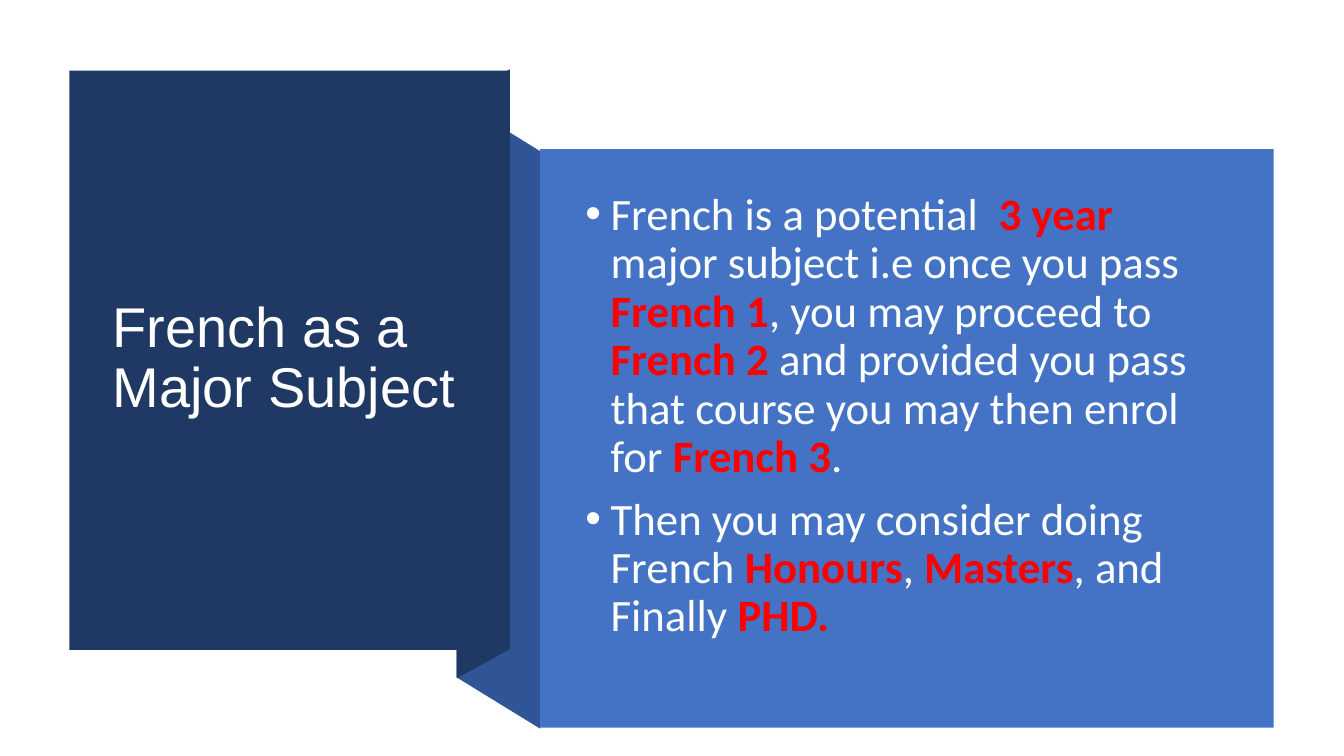
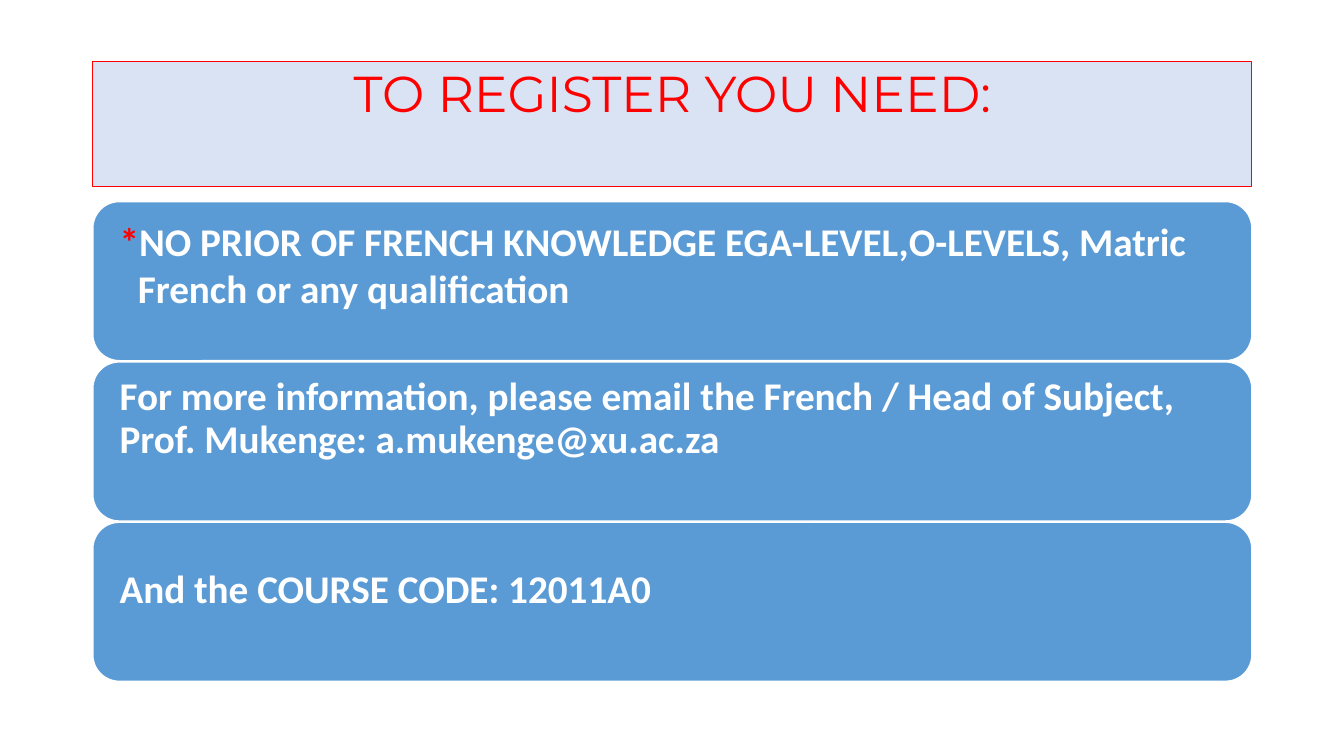
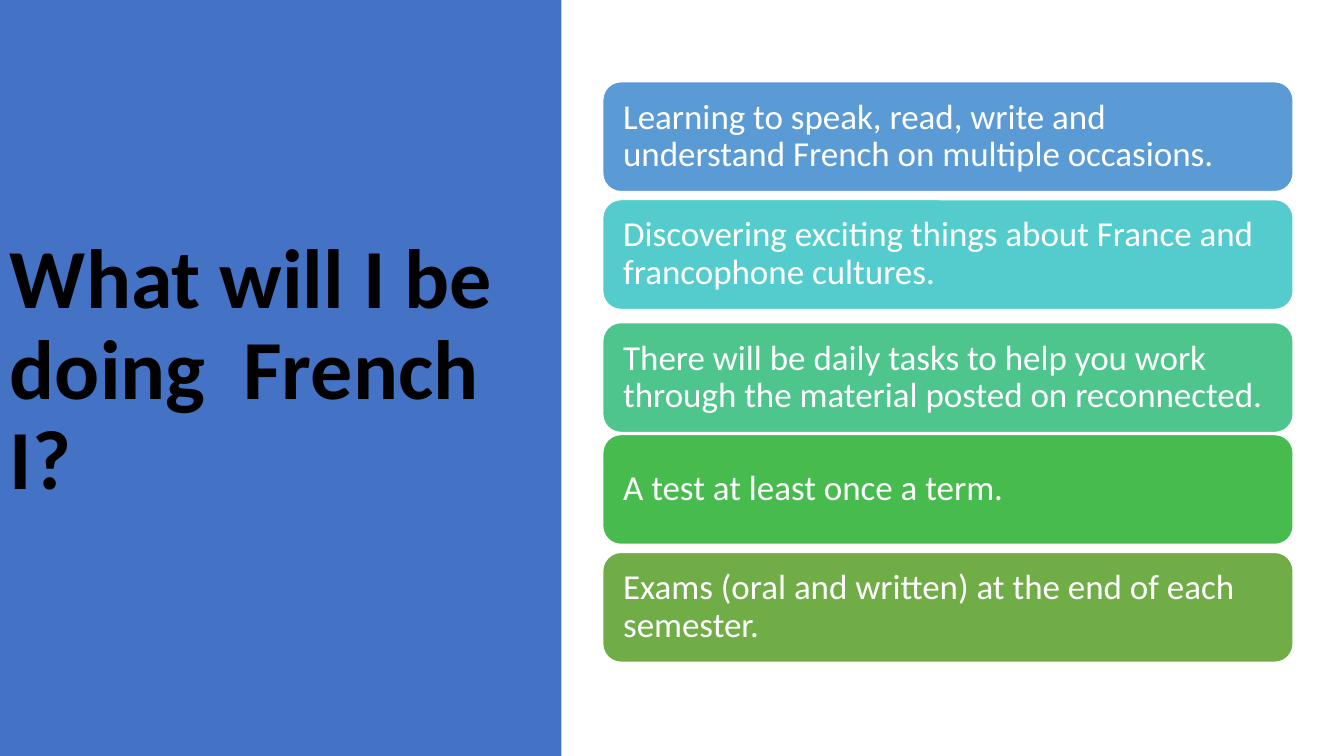
"""Build three slides on studying French."""
from lxml import etree
from pptx import Presentation
from pptx.dml.color import RGBColor
from pptx.enum.shapes import MSO_SHAPE
from pptx.enum.text import MSO_ANCHOR, MSO_AUTO_SIZE, PP_ALIGN
from pptx.oxml.ns import qn
from pptx.util import Cm, Pt

RECT, ROUND = MSO_SHAPE.RECTANGLE, MSO_SHAPE.ROUNDED_RECTANGLE
LEFT, CENTER = PP_ALIGN.LEFT, PP_ALIGN.CENTER
TOP, MIDDLE = MSO_ANCHOR.TOP, MSO_ANCHOR.MIDDLE
FIXED = MSO_AUTO_SIZE.NONE

HUES = {
    "navy": "203864", "fold": "2F5597", "blue": "4472C4", "pale": "DAE3F3",
    "sky": "5B9BD5", "aqua": "54CCCD", "mint": "4DC58D", "green": "48BB4F",
    "olive": "70AD47", "red": "FF0000", "white": "FFFFFF", "snow": "FEFFFF",
    "black": "000000",
}
INSET = (0.25, 0.13, 0.25, 0.13)

# Text between bars is red and bold.
MAJOR = [
    "French is a potential  |3 year |major subject i.e once you pass |French 1"
    "|, you may proceed to |French 2 |and provided you pass that course you "
    "may then enrol for |French 3|.",
    "Then you may consider doing French |Honours|, |Masters|, and Finally |PHD.",
]
FOLD = [(13.61, 18.36), (11.51, 17.07), (11.51, 2.51), (13.61, 3.81)]
TAB = [(12.85, 16.36), (11.51, 17.09), (11.51, 2.49), (12.85, 1.75)]

NEEDS = [
    (["|*|NO PRIOR OF FRENCH KNOWLEDGE EGA-LEVEL,O-LEVELS, Matric",
      "French or any qualification"], 1.0, 0.86),
    (["For more information, please email the French / Head of Subject, "
      "Prof. Mukenge: a.mukenge@xu.ac.za"], 0.9, 1.12),
    (["And the COURSE CODE: 12011A0"], 0.9, 0.53),
]
TASKS = [
    (2.06, "sky", "Learning to speak, read, write and understand French on "
     "multiple occasions."),
    (5.03, "aqua", "Discovering exciting things about France and francophone "
     "cultures."),
    (8.13, "mint", "There will be daily tasks to help you work through the "
     "material posted on reconnected."),
    (10.95, "green", "A test at least once a term."),
    (13.92, "olive", "Exams (oral and written) at the end of each semester."),
]


def rgb(hue):
    """Return the named colour."""
    return RGBColor.from_string(HUES[hue])


def paint(shape, fill, line=None, width=1):
    """Fill and outline a shape, without a shadow."""
    shape.shadow.inherit = False
    shape.fill.solid()
    shape.fill.fore_color.rgb = rgb(fill)
    if line:
        shape.line.color.rgb = rgb(line)
        shape.line.width = Pt(width)
    else:
        shape.line.fill.background()
    return shape


def box(slide, kind, at, fill, line=None):
    """Add a painted preset shape."""
    shape = slide.shapes.add_shape(kind, *map(Cm, at))
    return paint(shape, fill, line)


def outline(slide, points, fill):
    """Add a painted closed outline."""
    spots = [(Cm(x), Cm(y)) for x, y in points]
    pen = slide.shapes.build_freeform(*spots[0])
    pen.add_line_segments(spots[1:], close=True)
    return paint(pen.convert_to_shape(), fill)


def indent(para, left, hang=0, mark=None):
    """Indent a paragraph and give it a bullet if asked."""
    props = para._p.get_or_add_pPr()
    props.set("marL", str(Cm(left)))
    props.set("indent", str(-Cm(hang)))
    if mark:
        face = etree.SubElement(props, qn("a:buFont"))
        face.set("typeface", "Arial")
        etree.SubElement(props, qn("a:buChar")).set("char", mark)


def write(shape, lines, size, hue="white", font="Calibri", bold=False,
          align=LEFT, anchor=MIDDLE, space=0.9, before=0, inset=INSET):
    """Write paragraphs into a shape in one format."""
    frame = shape.text_frame
    frame.word_wrap = True
    frame.auto_size = FIXED
    frame.vertical_anchor = anchor
    (frame.margin_left, frame.margin_top,
     frame.margin_right, frame.margin_bottom) = map(Cm, inset)
    for i, line in enumerate(lines):
        para = frame.paragraphs[0] if i == 0 else frame.add_paragraph()
        para.alignment = align
        para.line_spacing = space
        para.space_before = Pt(before)
        for j, part in enumerate(line.split("|")):
            if part:
                run = para.add_run()
                run.text = part
                run.font.name = font
                run.font.size = Pt(size)
                run.font.bold = bold or j % 2 == 1
                run.font.color.rgb = rgb("red" if j % 2 else hue)
    return frame.paragraphs


def head(slide, text, at, size, **style):
    """Place the title in front and write it."""
    title = slide.shapes.title
    title.left, title.top, title.width, title.height = map(Cm, at)
    title.element.getparent().append(title.element)
    write(title, [text], size, **style)
    return title


def major(slide):
    """Show the path of the major."""
    outline(slide, FOLD, "fold")
    outline(slide, TAB, "navy")
    box(slide, RECT, (1.75, 1.78, 11.1, 14.6), "navy")
    box(slide, RECT, (13.61, 3.76, 18.49, 14.58), "blue")
    head(slide, "French as a Major Subject", (2.59, 2.72, 9.42, 12.67), 40,
         font="Arial")
    body = slide.shapes.add_textbox(*map(Cm, (14.5, 4.19, 16.54, 12.62)))
    for para in write(body, MAJOR, 32, hue="snow", before=10):
        indent(para, 0.64, 0.64, "•")


def needs(slide):
    """Show what is needed to register."""
    title = head(slide, "TO REGISTER YOU NEED:", (2.34, 1.55, 29.21, 3.15), 36,
                 hue="red", font="Montserrat", align=CENTER, anchor=TOP,
                 inset=(0.25, 0.18, 0.25, 0.13))
    paint(title, "pale", "red", 0.75)
    for i, (lines, space, foot) in enumerate(NEEDS):
        card = box(slide, ROUND, (2.34, 5.08 + i * 4.04, 29.21, 4.01), "sky",
                   "white")
        paras = write(card, lines, 28, bold=True, space=space,
                      inset=(0.48, 0, 0.48, foot))
        for para in paras[1:]:
            indent(para, 0.46)


def tasks(slide):
    """Show the work of the first year."""
    box(slide, RECT, (0, 0, 14.15, 19.05), "blue")
    head(slide, "What will I be doing  French I?", (0, 1.73, 13.92, 15.29), 60,
         hue="black", bold=True)
    for top, fill, text in TASKS:
        card = box(slide, ROUND, (15.19, top, 17.4, 2.77), fill, "white")
        write(card, [text], 25, inset=(0.38, 0.13, 0.38, 0.13))


def main():
    """Build and save the deck."""
    deck = Presentation()
    deck.slide_width, deck.slide_height = Cm(33.87), Cm(19.05)
    for build in (major, needs, tasks):
        build(deck.slides.add_slide(deck.slide_layouts[5]))
    deck.save("out.pptx")


if __name__ == "__main__":
    main()
